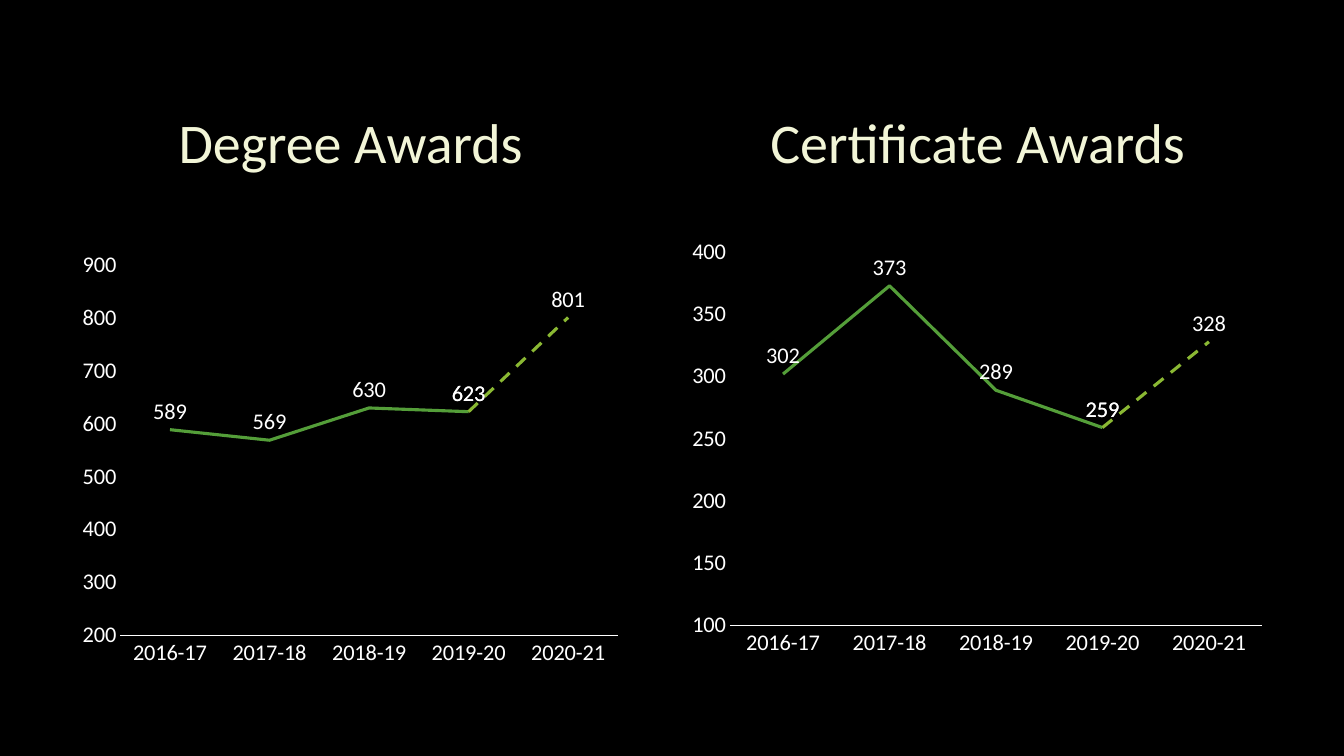
from pptx import Presentation
from pptx.chart.data import CategoryChartData
from pptx.dml.color import RGBColor
from pptx.enum.chart import XL_CHART_TYPE, XL_LABEL_POSITION, XL_MARKER_STYLE, XL_TICK_MARK
from pptx.enum.dml import MSO_LINE
from pptx.enum.text import MSO_ANCHOR, PP_ALIGN
from pptx.util import Pt

LINE_CHART = XL_CHART_TYPE.LINE
LABEL_ABOVE = XL_LABEL_POSITION.ABOVE
NO_MARKER = XL_MARKER_STYLE.NONE
NO_TICK = XL_TICK_MARK.NONE
SOLID, DASH = MSO_LINE.SOLID, MSO_LINE.DASH
MIDDLE = MSO_ANCHOR.MIDDLE
CENTER = PP_ALIGN.CENTER

BLACK = RGBColor(0x00, 0x00, 0x00)
WHITE = RGBColor(0xFF, 0xFF, 0xFF)
CREAM = RGBColor(0xF2, 0xF5, 0xD7)
GREEN = RGBColor(0x54, 0x9E, 0x39)
LIME = RGBColor(0x8A, 0xB8, 0x33)

FONT = "Calibri"
YEARS = ["2016-17", "2017-18", "2018-19", "2019-20", "2020-21"]
HEADING_TOP, HEADING_WIDTH, HEADING_HEIGHT = 62.6, 361.4, 76.3


def format_font(font, size, color):
    font.name = FONT
    font.size = Pt(size)
    font.color.rgb = color


def set_heading(sp, text, left):
    sp.left, sp.top = Pt(left), Pt(HEADING_TOP)
    sp.width, sp.height = Pt(HEADING_WIDTH), Pt(HEADING_HEIGHT)
    tf = sp.text_frame
    tf.word_wrap = True
    tf.vertical_anchor = MIDDLE
    p = tf.paragraphs[0]
    p.alignment = CENTER
    r = p.add_run()
    r.text = text
    format_font(r.font, 40, CREAM)


def format_axes(chart, minimum, maximum, step):
    for axis in (chart.category_axis, chart.value_axis):
        axis.major_tick_mark = axis.minor_tick_mark = NO_TICK
        axis.has_major_gridlines = False
        format_font(axis.tick_labels.font, 16, WHITE)
    line = chart.category_axis.format.line
    line.color.rgb = WHITE
    line.width = Pt(0.75)
    values = chart.value_axis
    values.format.line.fill.background()
    values.minimum_scale = minimum
    values.maximum_scale = maximum
    values.major_unit = step


def format_series(series, color, dash):
    series.smooth = False
    series.marker.style = NO_MARKER
    line = series.format.line
    line.color.rgb = color
    line.width = Pt(2.25)
    line.dash_style = dash
    labels = series.data_labels
    labels.show_value = True
    labels.position = LABEL_ABOVE
    format_font(labels.font, 16, WHITE)


def add_awards_chart(s, box, awards, scale):
    """Draw the awards as a solid line whose last step is dashed."""
    data = CategoryChartData()
    data.categories = YEARS
    data.add_series("Series 1", awards[:-1] + [None])
    data.add_series("Series 2", [None] * (len(awards) - 2) + awards[-2:])
    chart = s.shapes.add_chart(LINE_CHART, *map(Pt, box), data).chart
    chart.has_title = False
    chart.has_legend = False
    format_font(chart.font, 16, WHITE)
    plot = chart.plots[0]
    plot.vary_by_categories = False
    format_axes(chart, *scale)
    for series, color, dash in zip(plot.series, (GREEN, LIME), (SOLID, DASH)):
        format_series(series, color, dash)


def main():
    prs = Presentation()
    prs.slide_width, prs.slide_height = Pt(960), Pt(540)
    s = prs.slides.add_slide(prs.slide_layouts[5])
    s.background.fill.solid()
    s.background.fill.fore_color.rgb = BLACK

    set_heading(s.shapes.title, "Degree Awards", 69.8)
    add_awards_chart(s, (51.1, 173.5, 398.2, 308.9),
                     [589, 569, 630, 623, 801], (200, 900, 100))
    add_awards_chart(s, (486, 164.2, 424.1, 311),
                     [302, 373, 289, 259, 328], (100, 400, 50))
    set_heading(s.shapes.add_textbox(0, 0, 0, 0), "Certificate Awards", 517.7)
    prs.save("out.pptx")


if __name__ == "__main__":
    main()
